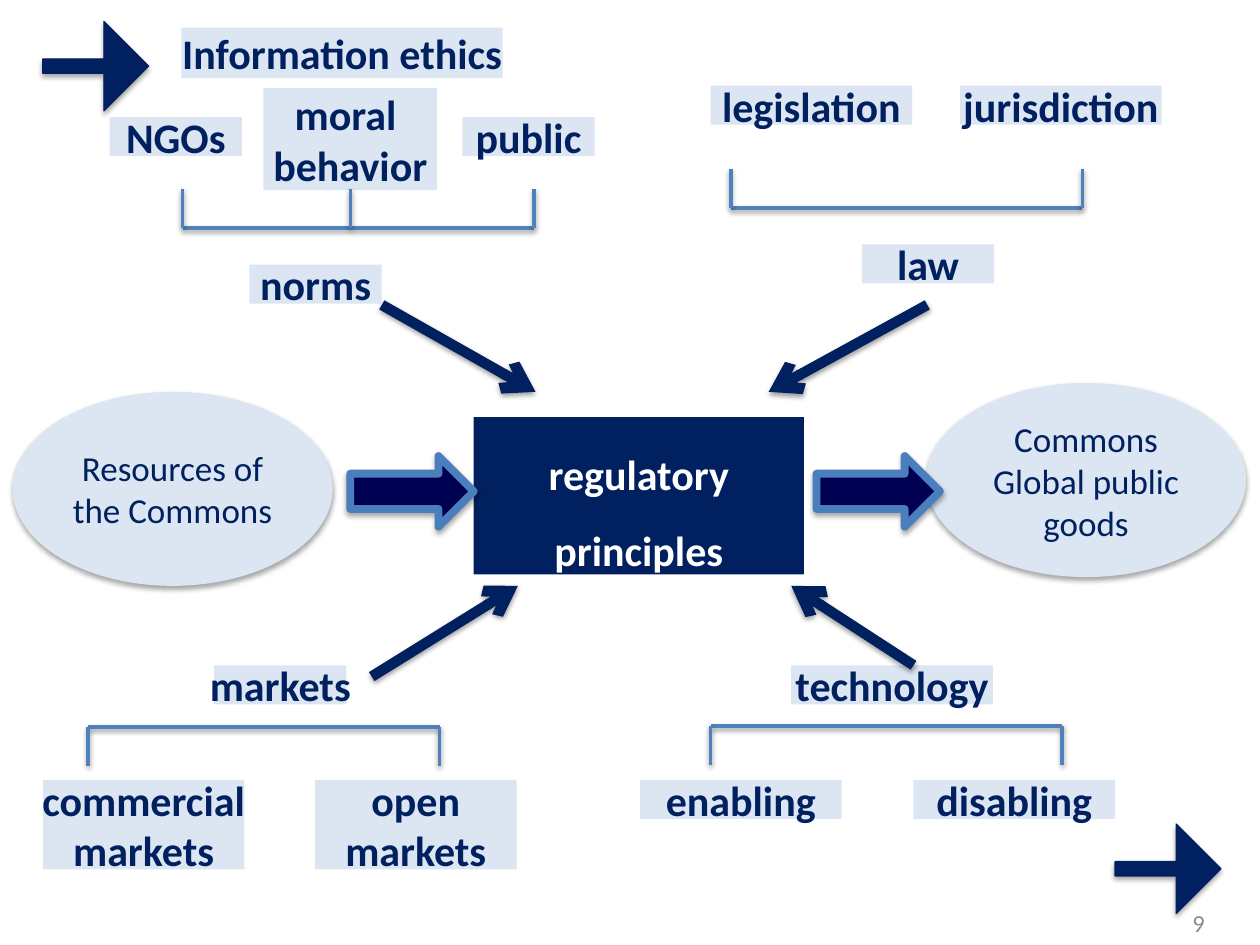
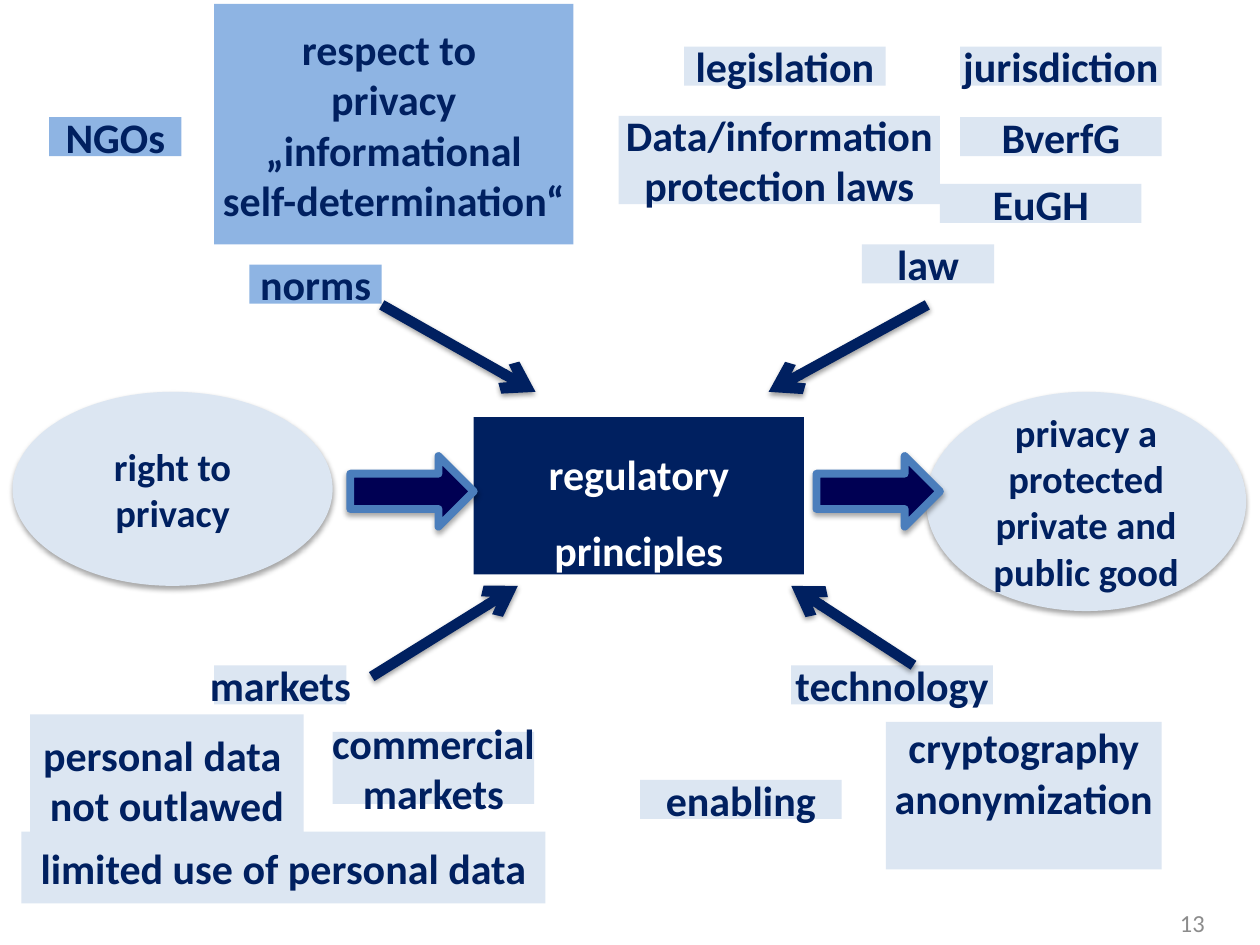
"""Build two slides on regulatory principles: the general scheme and its use for privacy."""
from dataclasses import dataclass
from typing import Optional

from lxml.etree import SubElement
from pptx import Presentation
from pptx.dml.color import RGBColor
from pptx.enum.shapes import MSO_CONNECTOR as Connector, MSO_SHAPE as Shape
from pptx.enum.text import MSO_ANCHOR as Anchor, PP_ALIGN as Align
from pptx.oxml.ns import qn
from pptx.util import Inches, Pt

NAVY = RGBColor(0x00, 0x20, 0x60)
DARK_NAVY = RGBColor(0x00, 0x00, 0x53)
PALE_BLUE = RGBColor(0xDC, 0xE6, 0xF2)
MID_BLUE = RGBColor(0x8E, 0xB4, 0xE3)
EDGE_BLUE = RGBColor(0x4B, 0x7E, 0xBC)
LINE_BLUE = RGBColor(0x4F, 0x81, 0xBD)
GREY = RGBColor(0x8C, 0x8C, 0x8C)
WHITE = RGBColor(0xFF, 0xFF, 0xFF)

FONT = "Calibri"
WIDE = 1.6
NARROW = 1.05
TICK = 0.31


@dataclass(frozen=True)
class Label:
    text: str
    left: float
    top: float
    width: float = WIDE
    height: float = 0.31
    fill: RGBColor = PALE_BLUE
    anchor: Anchor = Anchor.MIDDLE


@dataclass(frozen=True)
class Oval:
    text: str
    left: float
    top: float
    height: float = 1.54


@dataclass(frozen=True)
class Bracket:
    left: float
    bar: float
    tick: float = TICK
    stem: Optional[float] = None
    span: float = 2.79


@dataclass(frozen=True)
class BlockArrow:
    left: float
    top: float
    width: float
    height: float
    fill: RGBColor
    edge: RGBColor
    weight: float
    shaft: float = 0.5


@dataclass(frozen=True)
class Page:
    number: str
    oval_size: int
    oval_bold: bool
    ovals: tuple
    labels: tuple
    brackets: tuple = ()
    pointers: tuple = ()


SPOKES = (
    ((3.03, 2.42), (4.25, 3.11)),
    ((7.36, 2.42), (6.1, 3.11)),
    ((2.95, 5.37), (4.11, 4.65)),
    ((7.25, 5.28), (6.28, 4.65)),
)
FLOW_ARROWS = tuple(
    BlockArrow(left, 3.62, 0.98, 0.56, DARK_NAVY, EDGE_BLUE, 4.5) for left in (2.78, 6.48)
)
SHARED_LABELS = (
    Label("enabling", 5.08, 6.19),
    Label("technology", 6.28, 5.28),
    Label("markets", 1.7, 5.28, NARROW),
    Label("law", 6.84, 1.94, NARROW),
)

PAGES = (
    Page(
        "9", 20, False,
        ovals=(
            Oval("Resources of the Commons", 0.1, 3.11),
            Oval("Commons\nGlobal public goods", 7.35, 3.04),
        ),
        labels=(
            Label("disabling", 7.25, 6.19),
            Label("commercial\nmarkets", 0.34, 6.19, height=0.71),
            Label("open\nmarkets", 2.5, 6.19, height=0.71),
            Label("norms", 1.98, 2.1, NARROW),
            Label("legislation", 5.64, 0.68),
            Label("jurisdiction", 7.62, 0.68),
            Label("NGOs", 0.87, 0.93, NARROW),
            Label("moral \nbehavior", 2.09, 0.7, 1.38, 0.81),
            Label("public", 3.67, 0.93, NARROW),
            Label("Information ethics", 1.44, 0.22, 2.55, 0.4),
        ),
        brackets=(
            Bracket(5.64, 5.76),
            Bracket(0.7, 5.77),
            Bracket(5.8, 1.65, -TICK),
            Bracket(1.45, 1.81, -TICK, stem=2.78),
        ),
        pointers=tuple(
            BlockArrow(left, top, 0.84, 0.71, NAVY, NAVY, 0.75, 0.16)
            for left, top in ((0.34, 0.17), (8.85, 6.54))
        ),
    ),
    Page(
        "13", 22, True,
        ovals=(
            Oval("right to privacy", 0.1, 3.11),
            Oval("privacy a\nprotected private and public good", 7.35, 3.11, 1.74),
        ),
        labels=(
            Label("cryptography\nanonymization", 7.03, 5.73, 2.19, 1.17, anchor=Anchor.TOP),
            Label("norms", 1.98, 2.1, NARROW, fill=MID_BLUE),
            Label("NGOs", 0.39, 0.93, NARROW, fill=MID_BLUE),
            Label("respect to \nprivacy\n„informational\nself-determination“",
                  1.7, 0.03, 2.85, 1.91, MID_BLUE),
            Label("legislation", 5.43, 0.37),
            Label("Data/information\nprotection laws", 4.91, 0.92, 2.55, 0.7),
            Label("jurisdiction", 7.62, 0.37),
            Label("BverfG", 7.62, 0.93),
            Label("EuGH", 7.46, 1.46),
            Label("personal data \nnot outlawed", 0.24, 5.67, 2.17, 1.04),
            Label("commercial\nmarkets", 2.64, 5.81, height=0.57),
            Label("limited use of personal data", 0.17, 6.6, 4.16, 0.57),
        ),
    ),
)


def set_effects(item, opacity: int = 0, distance: float = 0) -> None:
    """Give an item a soft shadow below it, or none when opacity is zero."""
    effects = SubElement(item._element.spPr, qn("a:effectLst"))
    if opacity:
        values = {"blurRad": Pt(3.1), "dist": Pt(distance), "dir": 90 * 60000, "rotWithShape": 0}
        shadow = SubElement(effects, qn("a:outerShdw"),
                            {name: str(int(value)) for name, value in values.items()})
        color = SubElement(shadow, qn("a:srgbClr"), val="000000")
        SubElement(color, qn("a:alpha"), val=str(opacity * 1000))


def add_block(slide, kind: Shape, left: float, top: float, width: float, height: float,
              fill: RGBColor, edge: Optional[RGBColor] = None, weight: float = 0,
              shadow: bool = True):
    """Add a filled preset shape."""
    block = slide.shapes.add_shape(kind, *map(Inches, (left, top, width, height)))
    block.fill.solid()
    block.fill.fore_color.rgb = fill
    if edge is None:
        block.line.fill.background()
    else:
        block.line.color.rgb = edge
        block.line.width = Pt(weight)
    set_effects(block, 35 if shadow else 0, 1.8)
    return block


def write(box, text: str, size: int, color: RGBColor = NAVY, bold: bool = True,
          align: Align = Align.CENTER, spacing: float = 1.0, **frame_format) -> None:
    """Write text into a box, one paragraph for each line."""
    frame = box.text_frame
    settings = {"word_wrap": True, "vertical_anchor": Anchor.MIDDLE, **frame_format}
    for name, value in settings.items():
        setattr(frame, name, value)
    frame.text = text
    for para in frame.paragraphs:
        para.alignment = align
        para.line_spacing = spacing
        for span in para.runs:
            span.font.color.rgb = color
            for name, value in {"name": FONT, "size": Pt(size), "bold": bold}.items():
                setattr(span.font, name, value)


def add_label(slide, label: Label) -> None:
    """Add a flat rectangle with unwrapped bold text."""
    box = add_block(slide, Shape.RECTANGLE, label.left, label.top, label.width, label.height,
                    label.fill, shadow=False)
    margins = {f"margin_{side}": 0 for side in ("left", "top", "right", "bottom")}
    write(box, label.text, 24, word_wrap=False, vertical_anchor=label.anchor, **margins)


def add_line(slide, start: tuple, end: tuple, color: RGBColor = LINE_BLUE,
             weight: float = 2, arrow: bool = False) -> None:
    """Add a straight line, with an open arrowhead at its end on request."""
    line = slide.shapes.add_connector(Connector.STRAIGHT, *map(Inches, start + end))
    line.line.color.rgb = color
    line.line.width = Pt(weight)
    if arrow:
        SubElement(line.line._get_or_add_ln(), qn("a:tailEnd"), type="arrow")
    set_effects(line, 38, 1.6)


def add_bracket(slide, bracket: Bracket) -> None:
    """Add a bar with a tick at each end and an optional stem between."""
    right = bracket.left + bracket.span
    add_line(slide, (bracket.left, bracket.bar), (right, bracket.bar))
    for tick in (bracket.left, bracket.stem, right):
        if tick is not None:
            add_line(slide, (tick, bracket.bar), (tick, bracket.bar + bracket.tick))


def add_block_arrow(slide, arrow: BlockArrow) -> None:
    """Add a thick arrow that points right."""
    block = add_block(slide, Shape.RIGHT_ARROW, arrow.left, arrow.top, arrow.width,
                      arrow.height, arrow.fill, arrow.edge, arrow.weight)
    block.adjustments[0] = arrow.shaft


def add_page(deck, page: Page) -> None:
    """Add one slide of the regulation scheme."""
    slide = deck.slides.add_slide(deck.slide_layouts[6])
    number = slide.shapes.add_textbox(*map(Inches, (7.33, 7.12, 2.33, 0.4)))
    write(number, page.number, 14, GREY, bold=False, align=Align.RIGHT)
    for oval in page.ovals:
        ellipse = add_block(slide, Shape.OVAL, oval.left, oval.top, 2.54, oval.height, PALE_BLUE)
        write(ellipse, oval.text, page.oval_size, bold=page.oval_bold)
    core = add_block(slide, Shape.RECTANGLE, 3.76, 3.31, 2.62, 1.25, NAVY, shadow=False)
    write(core, "regulatory principles", 24, WHITE, spacing=1.5, vertical_anchor=Anchor.TOP)
    for arrow in FLOW_ARROWS + page.pointers:
        add_block_arrow(slide, arrow)
    for label in SHARED_LABELS + page.labels:
        add_label(slide, label)
    for bracket in page.brackets:
        add_bracket(slide, bracket)
    for start, end in SPOKES:
        add_line(slide, start, end, NAVY, 6, arrow=True)


def main() -> None:
    """Build and save the deck."""
    deck = Presentation()
    deck.slide_width, deck.slide_height = Inches(10), Inches(7.5)
    for page in PAGES:
        add_page(deck, page)
    deck.save("out.pptx")


if __name__ == "__main__":
    main()
